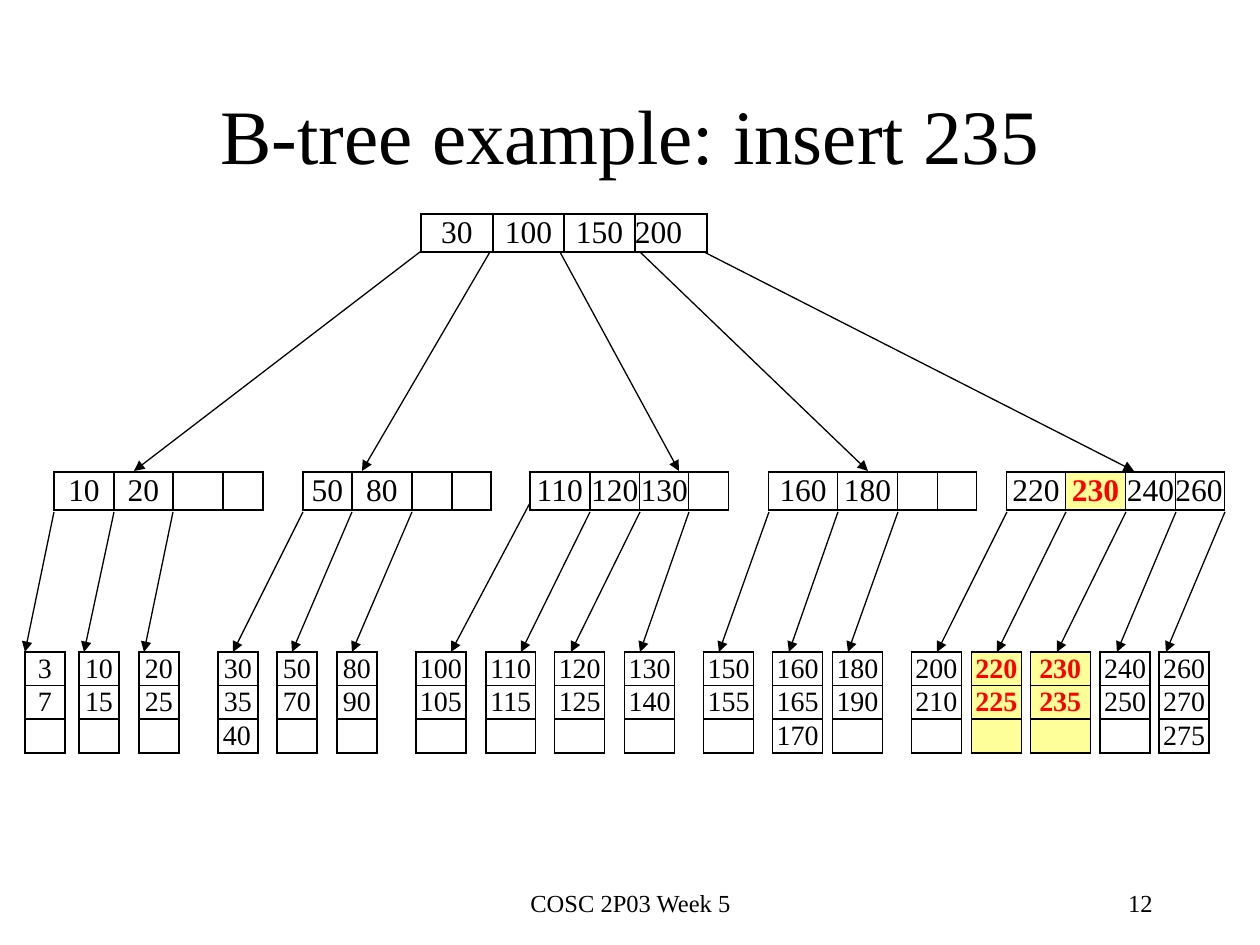
from itertools import pairwise

from lxml.etree import SubElement
from pptx import Presentation
from pptx.dml.color import RGBColor
from pptx.enum.shapes import MSO_CONNECTOR
from pptx.enum.text import MSO_ANCHOR, PP_ALIGN
from pptx.oxml.ns import qn
from pptx.util import Pt

PX = 914400 // 126
FONT = "Times New Roman"
COLORS = {"ink": "000000", "new": "FF0000", "highlight": "FFFF99"}

ROOT = [([421, 493, 564, 635, 707], ["30", "100", "150", "200"])]
BRANCHES = [
    ([54, 114, 173, 223, 263], ["10", "20", "", ""]),
    ([303, 352, 412, 452, 491], ["50", "80", "", ""]),
    ([530, 590, 640, 689, 729], ["110", "120", "130", ""]),
    ([769, 838, 898, 938, 977], ["160", "180", "", ""]),
    ([1007, 1066, 1126, 1176, 1225], ["220", "230", "240", "260"]),
]
LEAVES = [
    (25, 40, ["3", "7", ""]),
    (79, 40, ["10", "15", ""]),
    (139, 40, ["20", "25", ""]),
    (218, 40, ["30", "35", "40"]),
    (277, 40, ["50", "70", ""]),
    (337, 40, ["80", "90", ""]),
    (416, 50, ["100", "105", ""]),
    (486, 50, ["110", "115", ""]),
    (555, 50, ["120", "125", ""]),
    (625, 50, ["130", "140", ""]),
    (704, 50, ["150", "155", ""]),
    (773, 50, ["160", "165", "170"]),
    (833, 50, ["180", "190", ""]),
    (912, 50, ["200", "210", ""]),
    (972, 50, ["220", "225", ""]),
    (1031, 60, ["230", "235", ""]),
    (1101, 50, ["240", "250", ""]),
    (1160, 50, ["260", "270", "275"]),
]
ROOT_STARTS = [420, 490, 560, 640, 704]
BRANCH_TIPS = [134, 362, 679, 868, 1134]
LEAF_TIPS = [25, 84, 144, 233, 292, 352, 451, 521, 571, 640, 719, 789, 848,
             937, 997, 1057, 1117, 1166]


def rgb(name):
    return RGBColor.from_string(COLORS[name])


def write(paragraph, text, size, align, color="ink", bold=False):
    paragraph.alignment = align
    run = paragraph.add_run()
    run.text = text
    for name, value in {"name": FONT, "size": Pt(size), "bold": bold}.items():
        setattr(run.font, name, value)
    run.font.color.rgb = rgb(color)


def add_text(slide, box, text, size, align, anchor=MSO_ANCHOR.TOP):
    shape = slide.shapes.add_textbox(*(value * PX for value in box))
    shape.text_frame.word_wrap = True
    shape.text_frame.vertical_anchor = anchor
    write(shape.text_frame.paragraphs[0], text, size, align)


def add_arrow(slide, start, end):
    points = (value * PX for value in (*start, *end))
    connector = slide.shapes.add_connector(MSO_CONNECTOR.STRAIGHT, *points)
    connector.line.width = Pt(0.75)
    connector.line.color.rgb = rgb("ink")
    properties = connector.line._get_or_add_ln()
    SubElement(properties, qn("a:tailEnd"), type="triangle")
    SubElement(connector._element.spPr, qn("a:effectLst"))


def set_borders(cell, visible_sides):
    properties = cell._tc.get_or_add_tcPr()
    for side in "LRTB":
        line = SubElement(properties, qn(f"a:ln{side}"), w=str(Pt(1)))
        if side in visible_sides:
            fill = SubElement(line, qn("a:solidFill"))
            SubElement(fill, qn("a:srgbClr"), val=COLORS["ink"])
        else:
            SubElement(line, qn("a:noFill"))


def format_cell(cell, key, width, size, align, highlighted, sides):
    inset = 5 * PX if width == 40 else 0
    for name, value in {"margin_left": inset, "margin_right": inset,
                        "margin_top": 0, "margin_bottom": 0,
                        "vertical_anchor": MSO_ANCHOR.MIDDLE}.items():
        setattr(cell, name, value)
    set_borders(cell, sides)
    if highlighted:
        cell.fill.solid()
        cell.fill.fore_color.rgb = rgb("highlight")
    else:
        cell.fill.background()
    paragraph = cell.text_frame.paragraphs[0]
    if key:
        write(paragraph, key, size, align, "new" if highlighted else "ink", highlighted)
    else:
        SubElement(paragraph._p, qn("a:endParaRPr"), sz=str(size * 100))


def node_columns(nodes):
    return [(left, right - left, [key])
            for edges, keys in nodes
            for (left, right), key in zip(pairwise(edges), keys)]


def with_gaps(columns):
    result = []
    end = columns[0][0]
    for left, width, keys in columns:
        if left > end:
            result.append((left - end, None))
        result.append((width, keys))
        end = left + width
    return result


def add_level(slide, columns, top, row_height, size, left_aligned, highlights=()):
    row_count = len(columns[0][2])
    left = columns[0][0]
    total = columns[-1][0] + columns[-1][1] - left
    slots = with_gaps(columns)
    box = (left, top, total, row_height * row_count)
    frame = slide.shapes.add_table(row_count, len(slots), *(value * PX for value in box))
    table = frame.table
    table.first_row = table.horz_banding = False
    for row in table.rows:
        row.height = row_height * PX
    for index, (width, keys) in enumerate(slots):
        table.columns[index].width = width * PX
        highlighted = keys is not None and keys[0] in highlights
        sides = "LR" if keys is None else "LRTB"
        for row, key in enumerate(keys or [""] * row_count):
            align = PP_ALIGN.LEFT if key == left_aligned else PP_ALIGN.CENTER
            format_cell(table.cell(row, index), key, width, size, align, highlighted, sides)


def add_arrows(slide):
    for start, tip in zip(ROOT_STARTS, BRANCH_TIPS):
        add_arrow(slide, (start, 252), (tip, 471))
    starts = [edge for edges, keys in BRANCHES
              for edge in edges[:len(list(filter(None, keys))) + 1]]
    for start, tip in zip(starts, LEAF_TIPS):
        add_arrow(slide, (start, 503 if start == 530 else 512), (tip, 652))


def main():
    presentation = Presentation()
    presentation.slide_width = 1260 * PX
    presentation.slide_height = 945 * PX
    slide = presentation.slides.add_slide(presentation.slide_layouts[6])
    add_text(slide, (431, 882, 399, 63), "COSC 2P03 Week 5", 14, PP_ALIGN.CENTER)
    add_text(slide, (903, 882, 262, 63), "12", 14, PP_ALIGN.RIGHT)
    add_text(slide, (95, 55, 1071, 158), "B-tree example: insert 235", 44,
             PP_ALIGN.CENTER, MSO_ANCHOR.MIDDLE)
    add_level(slide, node_columns(ROOT), 214, 38, 18, "200")
    add_level(slide, node_columns(BRANCHES), 472, 38, 18, "260", {"230"})
    add_level(slide, LEAVES, 652, 31, 16, "40", {"220", "230"})
    add_arrows(slide)
    presentation.save("out.pptx")


if __name__ == "__main__":
    main()
